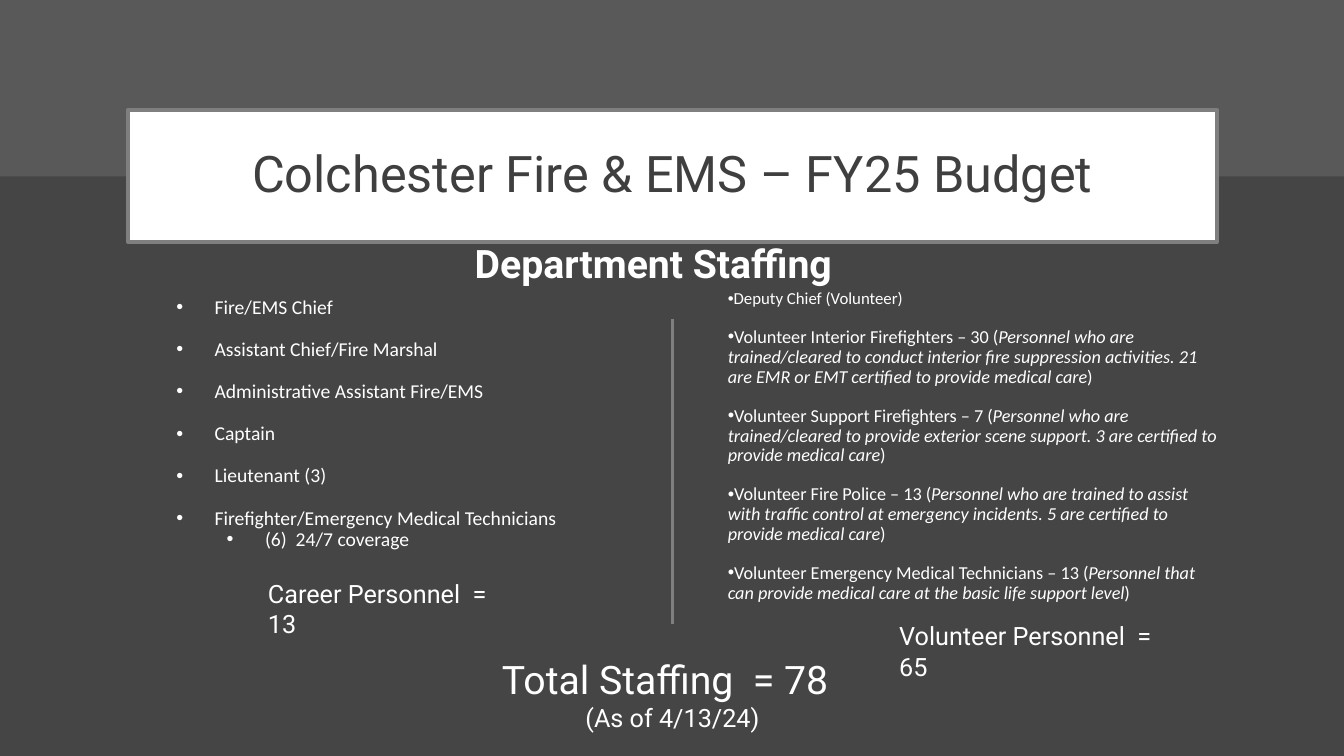
from lxml import etree
from pptx import Presentation
from pptx import util as u
from pptx.dml.color import RGBColor
from pptx.enum import shapes, text
from pptx.oxml.ns import qn

DARK = RGBColor(0x45, 0x45, 0x45)
BAND = RGBColor(0x59, 0x59, 0x59)
RULE = RGBColor(0x7F, 0x7F, 0x7F)
TITLE = RGBColor(0x3F, 0x3F, 0x3F)
WHITE = RGBColor(0xFF, 0xFF, 0xFF)


def add_textbox(left, top, width, height):
    box = page.shapes.add_textbox(u.Inches(left), u.Inches(top), u.Inches(width), u.Inches(height))
    box.text_frame.word_wrap = True
    return box.text_frame


def style(para, size, font="Roboto", color=WHITE, bold=False):
    for span in para.runs:
        span.font.size = u.Pt(size)
        span.font.name = font
        span.font.color.rgb = color
        span.font.bold = bold


deck = Presentation()
deck.slide_width, deck.slide_height = u.Inches(13.33), u.Inches(7.5)
page = deck.slides.add_slide(deck.slide_layouts[5])
page.background.fill.solid()
page.background.fill.fore_color.rgb = DARK

# Title in a framed white panel
title = page.shapes.title
title.left, title.top = u.Inches(1.27), u.Inches(1.09)
title.width, title.height = u.Inches(10.8), u.Inches(1.31)
title.fill.solid()
title.fill.fore_color.rgb = WHITE
title.line.color.rgb = RULE
title.line.width = u.Pt(3)
frame = title.text_frame
frame.text = "Colchester Fire & EMS – FY25 Budget"
frame.auto_size = text.MSO_AUTO_SIZE.NONE
frame.vertical_anchor = text.MSO_ANCHOR.MIDDLE
frame.paragraphs[0].alignment = text.PP_ALIGN.CENTER
frame.paragraphs[0].line_spacing = 0.9
style(frame.paragraphs[0], 36, color=TITLE)

# Top band, behind the title
band = page.shapes.add_shape(shapes.MSO_SHAPE.RECTANGLE, 0, 0, deck.slide_width, u.Inches(1.75))
band.shadow.inherit = False
band.fill.solid()
band.fill.fore_color.rgb = BAND
band.line.fill.background()
title.element.addprevious(band.element)

# Divider between the two columns
divider = page.shapes.add_connector(
    shapes.MSO_CONNECTOR.STRAIGHT, u.Inches(6.67), u.Inches(3.16), u.Inches(6.67), u.Inches(6.19))
divider.line.color.rgb = RULE
divider.line.width = u.Pt(1.5)
etree.SubElement(divider.element.spPr, qn("a:effectLst"))

# Staff lists: (plain text, italic note, size, level)
career = [
    ("Fire/EMS Chief", "", 14, 0),
    ("Assistant Chief/Fire Marshal", "", 14, 0),
    ("Administrative Assistant Fire/EMS", "", 14, 0),
    ("Captain", "", 14, 0),
    ("Lieutenant (3)", "", 14, 0),
    ("Firefighter/Emergency Medical Technicians", "", 14, 0),
    ("(6)  24/7 coverage", "", 14, 1),
]
volunteers = [
    ("Deputy Chief (Volunteer)", "", 12, 0),
    ("Volunteer Interior Firefighters – 30 (",
     "Personnel who are trained/cleared to conduct interior fire suppression activities. "
     "21 are EMR or EMT certified to provide medical care", 13, 0),
    ("Volunteer Support Firefighters – 7 (",
     "Personnel who are trained/cleared to provide exterior scene support. "
     "3 are certified to provide medical care", 13, 0),
    ("Volunteer Fire Police – 13 (",
     "Personnel who are trained to assist with traffic control at emergency incidents. "
     "5 are certified to provide medical care", 13, 0),
    ("Volunteer Emergency Medical Technicians – 13 (",
     "Personnel that can provide medical care at the basic life support level", 13, 0),
]
columns = [
    (career, (1.65, 2.9, 4.45, 3.24), 0.38, 15),
    (volunteers, (7.12, 2.83, 5.11, 3.33), 0, 14),
]
for entries, place, hang, gap in columns:
    frame = add_textbox(*place)
    for index, (role, note, size, level) in enumerate(entries):
        para = frame.add_paragraph() if index else frame.paragraphs[0]
        para.text = role
        if note:
            span = para.add_run()
            span.text = note
            span.font.italic = True
            para.add_run().text = ")"
        style(para, size, "Calibri")
        para.level = level
        para.line_spacing = 0.9
        para.space_before = u.Pt(gap if index and not level else 0)
        props = para._p.get_or_add_pPr()
        props.set("marL", str(u.Inches(hang + 0.5 * level)))
        props.set("indent", str(-u.Inches(hang)))
        etree.SubElement(props, qn("a:buFont"), typeface="Arial")
        etree.SubElement(props, qn("a:buChar"), char="•")

# Heading and totals
labels = [
    ("Department Staffing", (4.61, 2.33, 4.38, 0.57), 28, True),
    ("Total Staffing  = 78", (4.88, 6.45, 3.58, 0.91), 28, False),
    ("Career Personnel  = 13", (2.56, 5.69, 2.64, 0.4), 18, False),
    ("Volunteer Personnel  = 65", (8.82, 6.11, 2.95, 0.4), 18, False),
]
for words, place, size, bold in labels:
    frame = add_textbox(*place)
    frame.text = words
    style(frame.paragraphs[0], size, bold=bold)
    if words.startswith("Total"):
        para = frame.add_paragraph()
        para.text = "(As of 4/13/24)"
        para.alignment = text.PP_ALIGN.CENTER
        style(para, 18)

deck.save("out.pptx")
